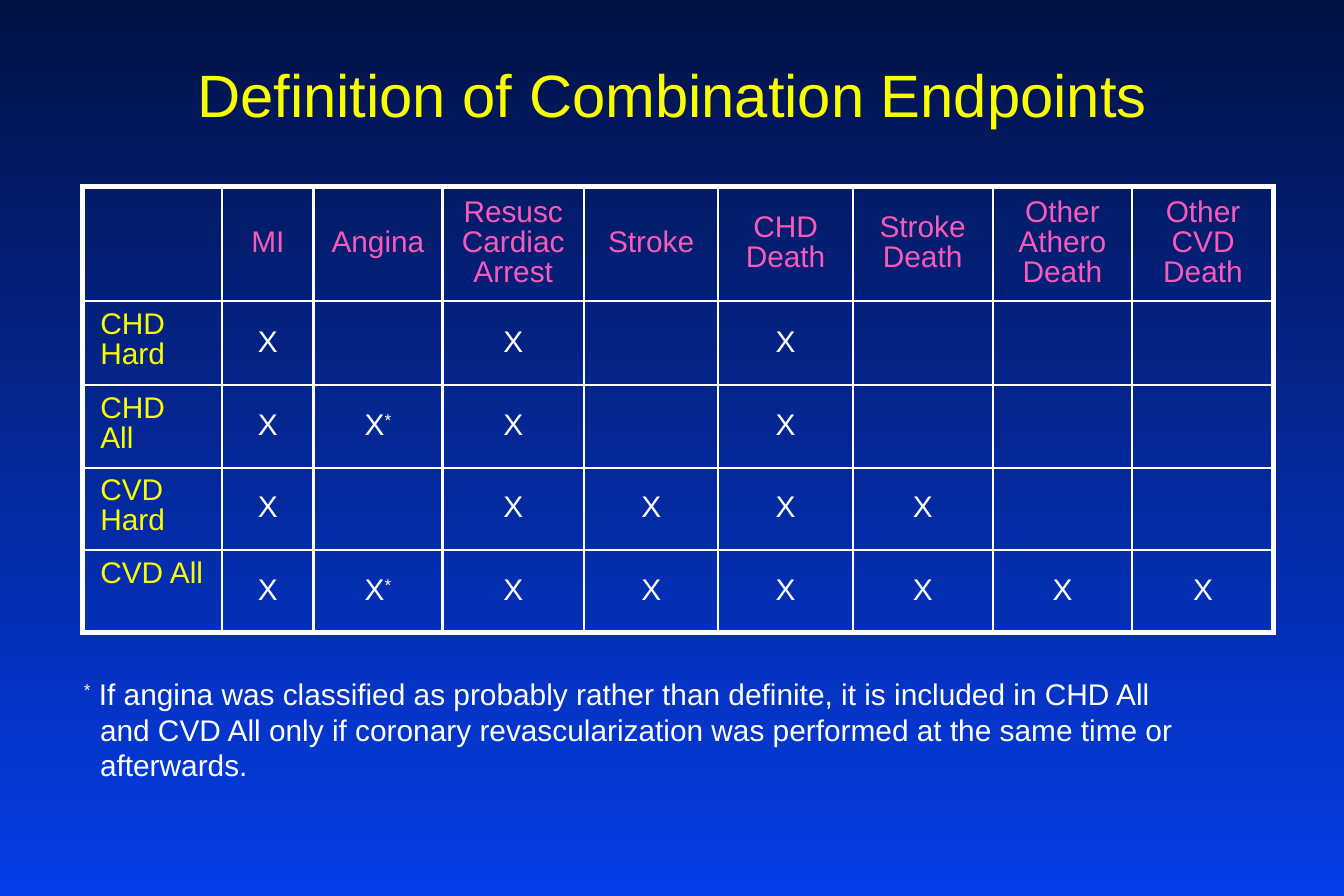
"""Build a slide with a table that defines combination endpoints."""
from lxml import etree
from pptx import Presentation
from pptx.dml.color import RGBColor
from pptx.enum.text import MSO_ANCHOR, PP_ALIGN
from pptx.oxml.ns import qn
from pptx.util import Inches, Pt

MIDDLE, TOP = MSO_ANCHOR.MIDDLE, MSO_ANCHOR.TOP
CENTER, LEFT = PP_ALIGN.CENTER, PP_ALIGN.LEFT
YELLOW, PINK, WHITE = "FAFD00", "F95AB7", "FFFFFF"
THIN, THICK = Pt(1), Pt(2.25)


def write(paragraph, parts, size, color, alignment):
    """Write text parts, raising each asterisk."""
    paragraph.alignment = alignment
    paragraph.font.name = "Arial"
    paragraph.font.size = Pt(size)
    paragraph.font.color.rgb = RGBColor.from_string(color)
    for part in parts:
        run = paragraph.add_run()
        run.text = part
        if part == "*":
            run.font._element.set("baseline", "30000")


def add_borders(cell, widths):
    """Draw white borders on the left, right, top and bottom."""
    properties = cell._tc.get_or_add_tcPr()
    for position, (side, width) in enumerate(zip("LRTB", widths)):
        line = etree.Element(qn(f"a:ln{side}"), w=str(width))
        fill = etree.SubElement(line, qn("a:solidFill"))
        etree.SubElement(fill, qn("a:srgbClr"), val=WHITE)
        properties.insert(position, line)


presentation = Presentation()
presentation.slide_width = Inches(7.5)
presentation.slide_height = Inches(5)
slide = presentation.slides.add_slide(presentation.slide_layouts[6])

background = slide.background.fill
background.gradient()
background.gradient_angle = 270
for stop, color, position in zip(background.gradient_stops, ["021245", "063DE8"], [0, 1]):
    stop.color.rgb = RGBColor.from_string(color)
    stop.position = position

title = slide.shapes.add_textbox(Inches(0), Inches(0.18), Inches(7.5), Inches(0.68))
title.text_frame.word_wrap = True
title.text_frame.vertical_anchor = MIDDLE
write(title.text_frame.paragraphs[0], ["Definition of Combination Endpoints"], 24, YELLOW, CENTER)

rows = [
    ["", "MI", "Angina", "Resusc Cardiac Arrest", "Stroke", "CHD Death",
     "Stroke Death", "Other Athero Death", "Other CVD Death"],
    ["CHD Hard", "X", "", "X", "", "X", "", "", ""],
    ["CHD All", "X", "X*", "X", "", "X", "", "", ""],
    ["CVD Hard", "X", "", "X", "X", "X", "X", "", ""],
    ["CVD All", "X", "X*", "X", "X", "X", "X", "X", "X"],
]
column_widths = [0.78, 0.51, 0.72, 0.79, 0.75, 0.75, 0.78, 0.78, 0.79]
row_heights = [0.64, 0.47, 0.46, 0.46, 0.46]
last_row, last_column = len(rows) - 1, len(column_widths) - 1

table = slide.shapes.add_table(len(rows), len(column_widths), Inches(0.46), Inches(1.04),
                               Inches(6.65), Inches(2.49)).table
for column, width in zip(table.columns, column_widths):
    column.width = Inches(width)
for row, height in zip(table.rows, row_heights):
    row.height = Inches(height)

for row_index, texts in enumerate(rows):
    for column_index, text in enumerate(texts):
        cell = table.cell(row_index, column_index)
        cell.fill.background()
        edges = [column_index == 0, column_index == last_column,
                 row_index == 0, row_index == last_row]
        add_borders(cell, [THICK if edge else THIN for edge in edges])
        is_label = column_index == 0
        cell.vertical_anchor = TOP if is_label else MIDDLE
        color = PINK if row_index == 0 else YELLOW if is_label else WHITE
        paragraph = cell.text_frame.paragraphs[0]
        paragraph.line_spacing = 0.9
        parts = ["X", "*"] if text == "X*" else [text] if text else []
        write(paragraph, parts, 12, color, LEFT if is_label else CENTER)

note = slide.shapes.add_textbox(Inches(0.37), Inches(3.72), Inches(6.96), Inches(0.71))
note.text_frame.word_wrap = True
note_lines = [
    ["*", " If angina was classified as probably rather than definite, it is included in CHD All"],
    ["and CVD All only if coronary revascularization was performed at the same time or"],
    ["afterwards."],
]
for index, parts in enumerate(note_lines):
    paragraph = note.text_frame.add_paragraph() if index else note.text_frame.paragraphs[0]
    write(paragraph, parts, 12, WHITE, LEFT)
    if index:
        paragraph._p.get_or_add_pPr().set("marL", str(Inches(0.09)))

presentation.save("out.pptx")
